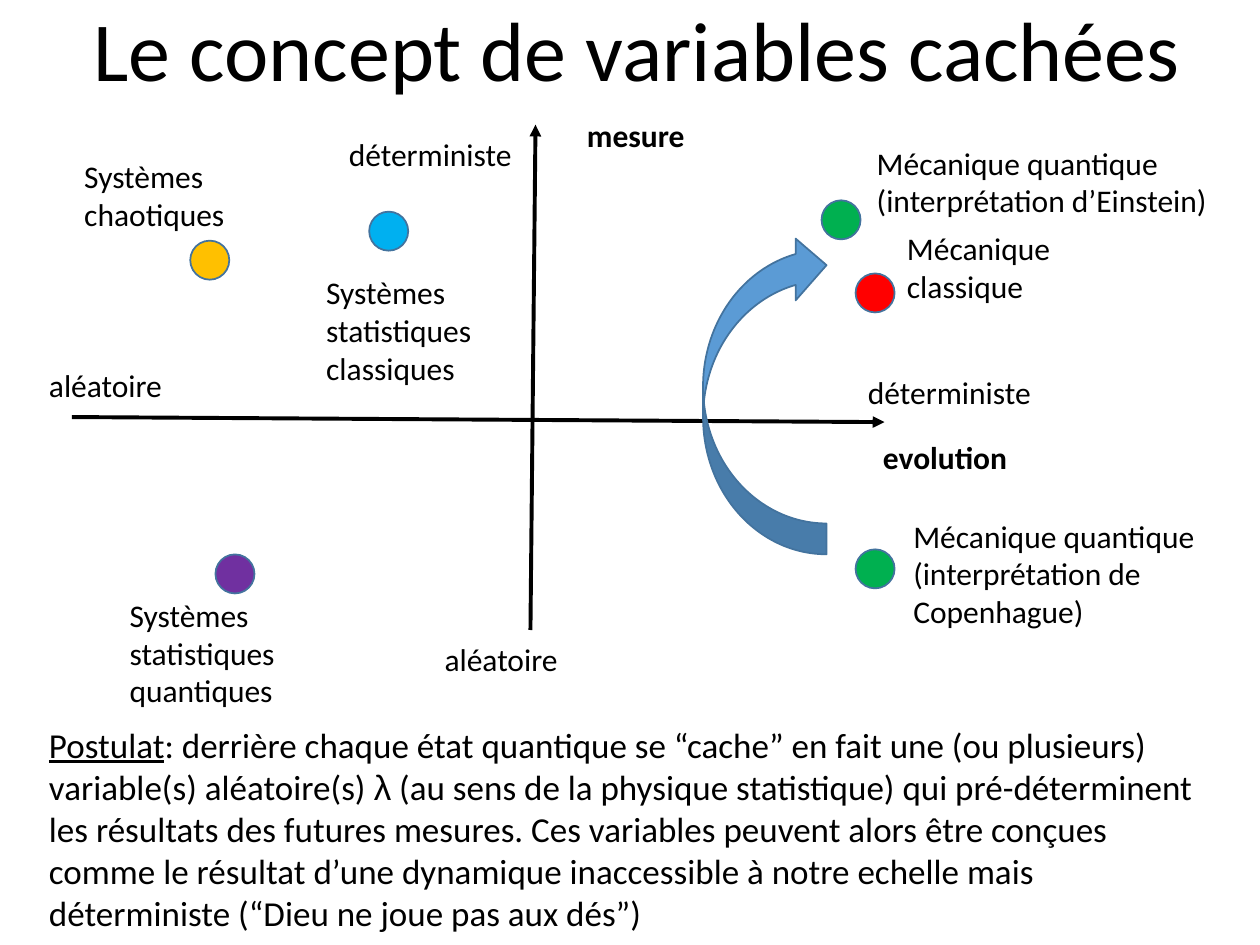
"""Build the slide on hidden variables: a map of physical theories by evolution and measurement."""
from typing import NamedTuple

from lxml.etree import SubElement
from pptx import Presentation
from pptx.dml.color import RGBColor
from pptx.enum.shapes import MSO_CONNECTOR, MSO_SHAPE
from pptx.enum.text import MSO_ANCHOR, MSO_AUTO_SIZE, PP_ALIGN
from pptx.oxml.ns import qn
from pptx.shapes.autoshape import Shape
from pptx.slide import Slide
from pptx.util import Inches, Pt

COLUMNS, ROWS = 100, 75
WIDTH, HEIGHT = Inches(10), Inches(7.5)
DOT_SIZE = 3.1
COLORS = {
    "text": "000000",
    "axis": "000000",
    "outline": "43739E",
    "arrow": "5B9BD5",
    "classical": "FF0000",
    "chaotic": "FFC000",
    "quantum": "00B050",
    "classical statistics": "00B0F0",
    "quantum statistics": "7030A0",
}


class Box(NamedTuple):
    column: float
    row: float
    columns: float
    rows: float


class Run(NamedTuple):
    text: str
    font: str = "Calibri"
    underline: bool = False


class Theory(NamedTuple):
    label: str
    label_box: Box
    color: str
    dot_column: float
    dot_row: float


class Axis(NamedTuple):
    start: tuple[float, float]
    end: tuple[float, float]


class Caption(NamedTuple):
    text: str
    box: Box
    bold: bool = False


AXES = [Axis((42.1, 50), (42.5, 9.9)), Axis((5.7, 33.1), (70.2, 33.5))]

CAPTIONS = [
    Caption("evolution", Box(69.1, 34.3, 15, 4), bold=True),
    Caption("mesure", Box(45.6, 8.7, 17.2, 4), bold=True),
    Caption("aléatoire", Box(2.9, 28.6, 17.3, 4)),
    Caption("déterministe", Box(67.9, 29.1, 17.3, 4)),
    Caption("déterministe", Box(26.7, 10.2, 17.3, 4)),
    Caption("aléatoire", Box(34.3, 50.3, 17.3, 4)),
]

THEORIES = [
    Theory("Mécanique classique", Box(71, 17.7, 19.4, 7.1), "classical", 67.9, 21.7),
    Theory("Systèmes chaotiques", Box(5.7, 12, 18.8, 7.1), "chaotic", 15.1, 19.1),
    Theory("Mécanique quantique (interprétation de Copenhague)",
           Box(71.5, 40.5, 25, 10.1), "quantum", 67.9, 43.6),
    Theory("Systèmes statistiques classiques",
           Box(24.9, 21.2, 18.8, 10.1), "classical statistics", 29.3, 16.8),
    Theory("Systèmes statistiques quantiques",
           Box(9.3, 46.8, 18.8, 10.1), "quantum statistics", 17.1, 44),
    Theory("Mécanique quantique (interprétation d’Einstein)",
           Box(68.6, 10.9, 30.8, 7.1), "quantum", 65.2, 15.9),
]

POSTULATE = [
    Run("Postulat", underline=True),
    Run(": derrière chaque état quantique se “cache” en fait une (ou plusieurs) "
        "variable(s) aléatoire(s) "),
    Run("λ", font="Arial"),
    Run(" (au sens de la physique statistique) qui pré-déterminent les résultats des "
        "futures mesures. Ces variables peuvent alors être conçues comme le résultat "
        "d’une dynamique inaccessible à notre echelle mais déterministe "
        "(“Dieu ne joue pas aux dés”)"),
]


def across(columns: float) -> int:
    """Return the length of a number of grid columns."""
    return round(WIDTH * columns / COLUMNS)


def down(rows: float) -> int:
    """Return the length of a number of grid rows."""
    return round(HEIGHT * rows / ROWS)


def place(box: Box) -> tuple[int, int, int, int]:
    """Return left, top, width and height of a grid box."""
    return across(box.column), down(box.row), across(box.columns), down(box.rows)


def add_text(slide: Slide, runs: list[Run], box: Box, *, size: float = 18, bold: bool = False,
             align: PP_ALIGN = PP_ALIGN.LEFT, anchor: MSO_ANCHOR = MSO_ANCHOR.TOP,
             spacing: float = 1.0, fit: MSO_AUTO_SIZE = MSO_AUTO_SIZE.SHAPE_TO_FIT_TEXT) -> None:
    """Write one wrapped paragraph of runs in a grid box."""
    frame = slide.shapes.add_textbox(*place(box)).text_frame
    frame.word_wrap = True
    frame.auto_size = fit
    frame.vertical_anchor = anchor
    paragraph = frame.paragraphs[0]
    paragraph.alignment = align
    paragraph.line_spacing = spacing
    for part in runs:
        run = paragraph.add_run()
        run.text = part.text
        run.font.name = part.font
        run.font.size = Pt(size)
        run.font.bold = bold
        run.font.underline = part.underline
        run.font.color.rgb = RGBColor.from_string(COLORS["text"])


def add_figure(slide: Slide, kind: MSO_SHAPE, box: Box, color: str) -> Shape:
    """Draw a filled and outlined preset shape in a grid box."""
    figure = slide.shapes.add_shape(kind, *place(box))
    figure.shadow.inherit = False
    figure.fill.solid()
    figure.fill.fore_color.rgb = RGBColor.from_string(COLORS[color])
    figure.line.color.rgb = RGBColor.from_string(COLORS["outline"])
    figure.line.width = Pt(1)
    return figure


def add_axis(slide: Slide, axis: Axis) -> None:
    """Draw an axis with an arrowhead at its end."""
    (start_column, start_row), (end_column, end_row) = axis
    line = slide.shapes.add_connector(MSO_CONNECTOR.STRAIGHT, across(start_column),
                                      down(start_row), across(end_column), down(end_row))
    line.line.color.rgb = RGBColor.from_string(COLORS["axis"])
    line.line.width = Pt(2.25)
    properties = line.element.spPr
    SubElement(properties.find(qn("a:ln")), qn("a:tailEnd"), type="triangle")
    SubElement(properties, qn("a:effectLst"))


def add_theory(slide: Slide, theory: Theory) -> None:
    """Draw the dot of a theory and its label."""
    dot_box = Box(theory.dot_column, theory.dot_row, DOT_SIZE, DOT_SIZE)
    add_figure(slide, MSO_SHAPE.OVAL, dot_box, theory.color)
    add_text(slide, [Run(theory.label)], theory.label_box)


def main() -> None:
    """Build and save the presentation."""
    deck = Presentation()
    deck.slide_width, deck.slide_height = WIDTH, HEIGHT
    slide = deck.slides.add_slide(deck.slide_layouts[6])

    add_text(slide, [Run("Le concept de variables cachées")], Box(1.1, 0, 98.9, 8.4), size=48,
             align=PP_ALIGN.CENTER, anchor=MSO_ANCHOR.BOTTOM, spacing=0.9,
             fit=MSO_AUTO_SIZE.NONE)
    for axis in AXES:
        add_axis(slide, axis)
    for caption in CAPTIONS:
        add_text(slide, [Run(caption.text)], caption.box, bold=caption.bold)
    arrow = add_figure(slide, MSO_SHAPE.CURVED_RIGHT_ARROW, Box(55.8, 18.6, 9.8, 25.4), "arrow")
    arrow.element.spPr.find(qn("a:xfrm")).set("flipV", "1")
    for theory in THEORIES:
        add_theory(slide, theory)
    add_text(slide, POSTULATE, Box(2.9, 56.9, 94.9, 17.8), size=20)

    deck.save("out.pptx")


if __name__ == "__main__":
    main()
